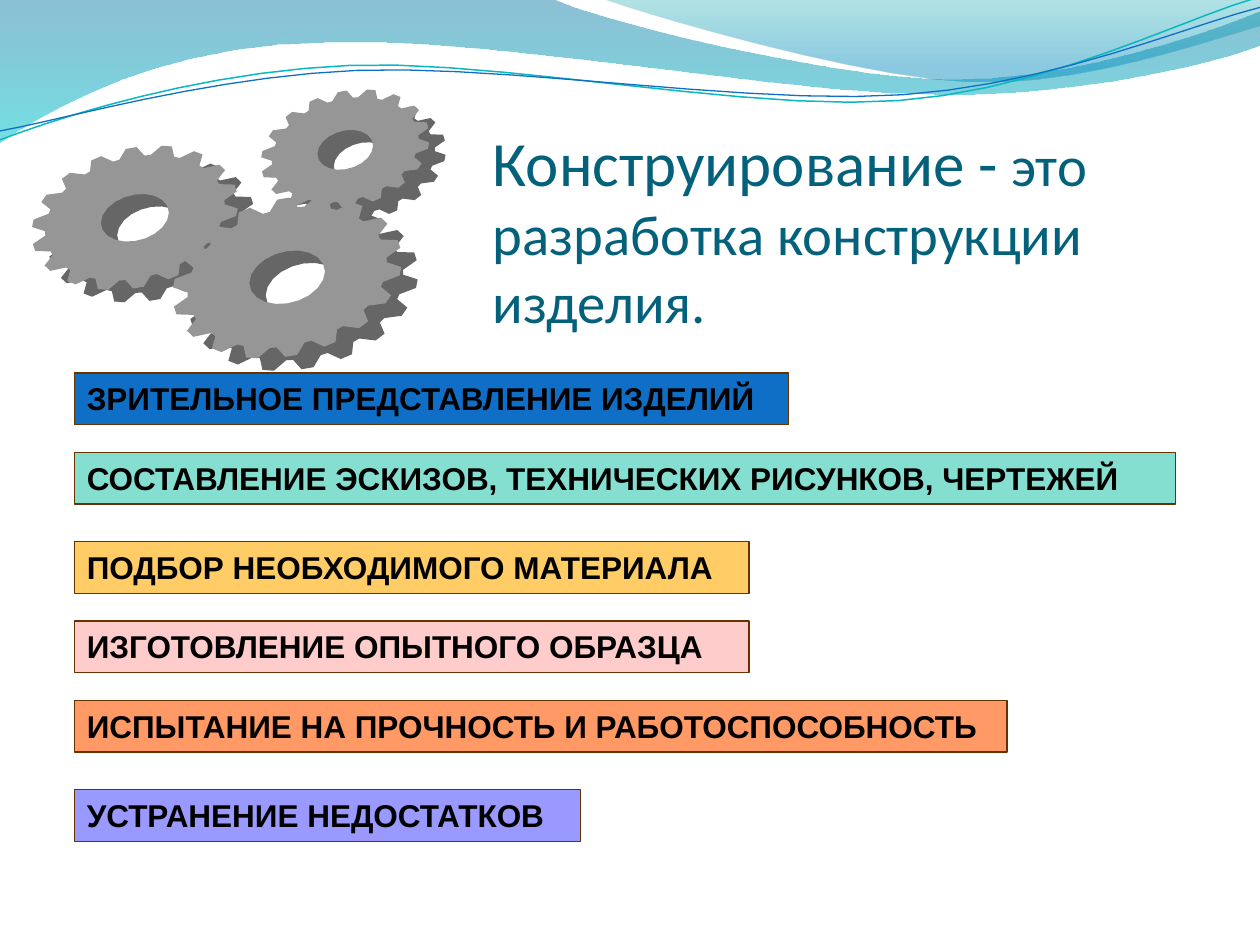
from dataclasses import dataclass
from math import cos, pi, sin

from lxml.etree import SubElement
from pptx import Presentation
from pptx.dml.color import RGBColor
from pptx.enum.shapes import MSO_SHAPE
from pptx.enum.text import MSO_ANCHOR, MSO_AUTO_SIZE, PP_ALIGN
from pptx.oxml.ns import qn
from pptx.util import Cm, Pt

COLORS = {
    "title": "04617B", "text": "000000", "border": "663300",
    "blue": "0F6FC6", "mint": "85DFD0", "amber": "FFCC66",
    "pink": "FFCCCC", "orange": "FF9966", "violet": "9999FF",
    "teal line": "0AB8BF", "deep blue": "0074A1", "cyan": "00C6CF",
    "teal": "00A1A9", "sea": "008BBF",
    "gear face": "969696", "gear side": "666666",
}

Point = tuple[float, float]


@dataclass
class Curve:
    """Start point, then segments: two numbers for a line, six for a Bézier."""
    start: Point
    segments: list[tuple[float, ...]]


@dataclass
class Wave:
    curve: Curve
    stops: list[tuple[float, str, int]]  # position, colour, opacity in percent


@dataclass
class Ripple:
    curve: Curve
    color: str
    width: float


@dataclass
class Gear:
    x: float
    y: float
    radius_x: float
    radius_y: float


@dataclass
class Stage:
    label: str
    width: float
    fill: str


WAVES = [
    Wave(Curve((0, 0), [
        (11.18, 0),
        (12.09, 0.43, 16.87, 1.6, 19.25, 1.6),
        (21.67, 1.6, 24.33, 0.66, 25.4, 0.23),
        (25.4, 0.91),
        (24.97, 1.12, 22.1, 1.93, 18.95, 1.91),
        (15.8, 1.91, 9.7, 0.71, 6.53, 0.86),
        (3.28, 0.91, 1.17, 2.11, 0, 2.87),
    ]), [(0, "deep blue", 45), (1, "cyan", 55)]),
    Wave(Curve((12.17, 0), [
        (12.93, 0.28, 17.32, 1.57, 19.53, 1.65),
        (21.74, 1.75, 24.41, 0.81, 25.4, 0.53),
        (25.4, 0),
    ]), [(0, "teal", 30), (0.8, "sea", 45)]),
]
RIPPLES = [
    Ripple(Curve((0, 2.82), [
        (1.22, 2.36, 4.01, 1.45, 7.04, 1.32),
        (10.03, 1.19, 15.06, 2.26, 18.11, 2.03),
        (21.16, 1.8, 23.83, 0.38, 25.35, -0.05),
    ]), "teal line", 0.85),
    Ripple(Curve((0, 2.64), [
        (1.19, 2.44, 4.17, 1.55, 7.19, 1.42),
        (10.24, 1.3, 15.16, 2.13, 18.21, 1.91),
        (21.23, 1.7, 23.9, 0.53, 25.4, 0.15),
    ]), "blue", 0.75),
]
GEARS = [
    Gear(6.96, 3.02, 1.7, 1.19),
    Gear(2.72, 4.39, 2.08, 1.42),
    Gear(5.79, 5.59, 2.31, 1.6),
]
TEETH, HOLE_POINTS = 18, 20
GEAR_DEPTH = (0.33, 0.25)
STAGES = [
    Stage("ЗРИТЕЛЬНОЕ ПРЕДСТАВЛЕНИЕ ИЗДЕЛИЙ", 14.4, "blue"),
    Stage("СОСТАВЛЕНИЕ ЭСКИЗОВ, ТЕХНИЧЕСКИХ РИСУНКОВ, ЧЕРТЕЖЕЙ", 22.2, "mint"),
    Stage("ПОДБОР НЕОБХОДИМОГО МАТЕРИАЛА", 13.6, "amber"),
    Stage("ИЗГОТОВЛЕНИЕ ОПЫТНОГО ОБРАЗЦА", 13.6, "pink"),
    Stage("ИСПЫТАНИЕ НА ПРОЧНОСТЬ И РАБОТОСПОСОБНОСТЬ", 18.8, "orange"),
    Stage("УСТРАНЕНИЕ НЕДОСТАТКОВ", 10.2, "violet"),
]


def rgb(name: str) -> RGBColor:
    return RGBColor.from_string(COLORS[name])


def sample(curve: Curve, steps: int = 10) -> list[Point]:
    points = [curve.start]
    for segment in curve.segments:
        if len(segment) == 2:
            points.append(segment)
            continue
        (x0, y0), (x1, y1, x2, y2, x3, y3) = points[-1], segment
        for step in range(1, steps + 1):
            t = step / steps
            a, b, c, d = (1 - t) ** 3, 3 * t * (1 - t) ** 2, 3 * t * t * (1 - t), t ** 3
            points.append((a * x0 + b * x1 + c * x2 + d * x3,
                           a * y0 + b * y1 + c * y2 + d * y3))
    return points


def draw_outline(slide, contours: list[list[Point]], close: bool = True):
    scaled = [[(Cm(x), Cm(y)) for x, y in contour] for contour in contours]
    builder = slide.shapes.build_freeform(*scaled[0][0], scale=1.0)
    for index, contour in enumerate(scaled):
        if index:
            builder.move_to(*contour[0])
        builder.add_line_segments(contour[1:], close=close)
    outline = builder.convert_to_shape()
    outline.shadow.inherit = False
    return outline


def draw_wave(slide, wave: Wave) -> None:
    outline = draw_outline(slide, [sample(wave.curve)])
    outline.line.fill.background()
    outline.fill.gradient()
    outline.fill.gradient_angle = 270
    for stop, (position, color, _) in zip(outline.fill.gradient_stops, wave.stops):
        stop.position = position
        stop.color.rgb = rgb(color)
    color_elements = list(outline.element.spPr.iter(qn("a:srgbClr")))
    for element, (_, _, opacity) in zip(color_elements, wave.stops):
        SubElement(element, qn("a:alpha")).set("val", str(opacity * 1000))


def draw_ripple(slide, ripple: Ripple) -> None:
    outline = draw_outline(slide, [sample(ripple.curve)], close=False)
    outline.fill.background()
    outline.line.color.rgb = rgb(ripple.color)
    outline.line.width = Pt(ripple.width)


def draw_gear(slide, gear: Gear) -> None:
    """Put a shifted dark side under the face to give the gear its thickness."""
    def place(angle: float, radius: float, depth: int) -> Point:
        across = gear.radius_x * radius * cos(angle)
        return (gear.x + across + GEAR_DEPTH[0] * depth,
                gear.y + gear.radius_y * radius * sin(angle) - 0.15 * across
                + GEAR_DEPTH[1] * depth)

    tooth = [(0, 0.87), (0.25, 1), (0.55, 1), (0.8, 0.87)]
    for depth, color in ((1, "gear side"), (0, "gear face")):
        rim = [place(2 * pi * (index + part) / TEETH, radius, depth)
               for index in range(TEETH) for part, radius in tooth]
        hole = [place(-2 * pi * index / HOLE_POINTS, 0.33, depth)
                for index in range(HOLE_POINTS)]
        outline = draw_outline(slide, [rim, hole])
        outline.fill.solid()
        outline.fill.fore_color.rgb = rgb(color)
        outline.line.fill.background()


def add_run(paragraph, text: str, font: str, size: float, color: str, bold: bool = False) -> None:
    run = paragraph.add_run()
    run.text = text
    run.font.name, run.font.size, run.font.bold = font, Pt(size), bold
    run.font.color.rgb = rgb(color)


def draw_stage(slide, stage: Stage, index: int) -> None:
    top = 7.52 + 1.6 * index + 0.2 * ((index + 1) // 3)
    box = slide.shapes.add_shape(MSO_SHAPE.RECTANGLE, Cm(1.5), Cm(top), Cm(stage.width), Cm(1.04))
    box.shadow.inherit = False
    box.fill.solid()
    box.fill.fore_color.rgb = rgb(stage.fill)
    box.line.color.rgb = rgb("border")
    box.line.width = Pt(0.75)
    frame = box.text_frame
    frame.word_wrap = True
    frame.auto_size = MSO_AUTO_SIZE.SHAPE_TO_FIT_TEXT
    frame.vertical_anchor = MSO_ANCHOR.TOP
    frame.paragraphs[0].alignment = PP_ALIGN.LEFT
    add_run(frame.paragraphs[0], stage.label, "Arial", 18, "text", bold=True)


def fill_title(title) -> None:
    title.left, title.top, title.width, title.height = Cm(9.93), Cm(5.36), Cm(12.7), Cm(1.4)
    frame = title.text_frame
    frame.word_wrap = True
    frame.auto_size = MSO_AUTO_SIZE.NONE
    frame.vertical_anchor = MSO_ANCHOR.BOTTOM
    frame.margin_left = frame.margin_right = frame.margin_bottom = 0
    definition = frame.paragraphs[0]
    definition.alignment = PP_ALIGN.LEFT
    add_run(definition, "Конструирование -", "Calibri", 36, "title")
    add_run(definition, " это разработка конструкции изделия.", "Calibri", 32.4, "title")


def main() -> None:
    deck = Presentation()
    deck.slide_width, deck.slide_height = Cm(25.4), Cm(19.05)
    slide = deck.slides.add_slide(deck.slide_layouts[5])
    for wave in WAVES:
        draw_wave(slide, wave)
    for ripple in RIPPLES:
        draw_ripple(slide, ripple)
    fill_title(slide.shapes.title)
    for gear in GEARS:
        draw_gear(slide, gear)
    for index, stage in enumerate(STAGES):
        draw_stage(slide, stage, index)
    deck.save("out.pptx")


if __name__ == "__main__":
    main()
